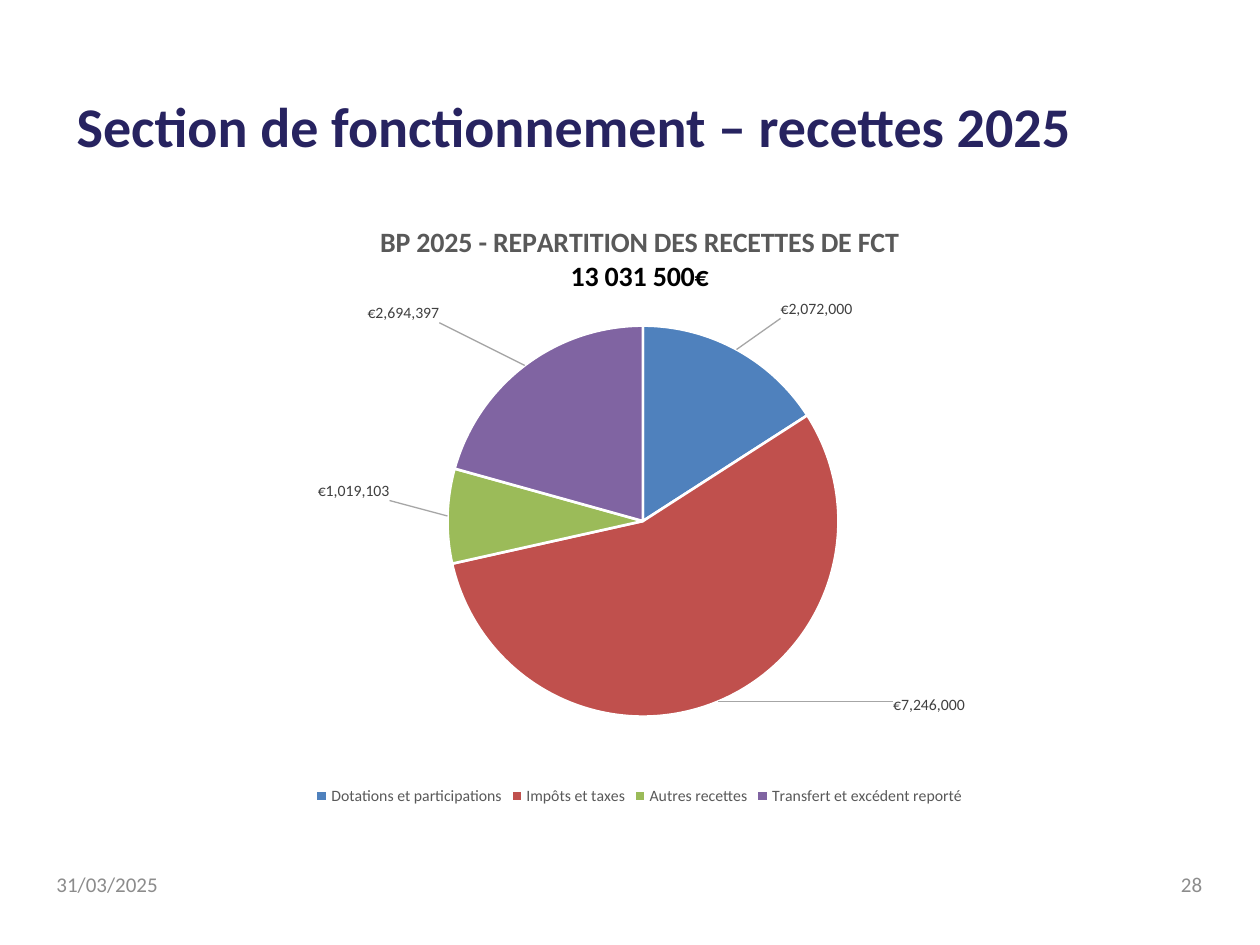
from dataclasses import dataclass

from pptx import Presentation
from pptx.chart.data import CategoryChartData
from pptx.dml.color import RGBColor
from pptx.enum.chart import XL_CHART_TYPE, XL_LABEL_POSITION, XL_LEGEND_POSITION
from pptx.enum.text import MSO_ANCHOR, PP_ALIGN
from pptx.oxml import parse_xml
from pptx.oxml.ns import nsdecls, qn
from pptx.slide import Slide
from pptx.util import Inches, Pt

COLORS = {
    "title": "272360",
    "footer": "8C8C8C",
    "heading": "595959",
    "total": "000000",
    "label": "404040",
    "leader": "A6A6A6",
    "edge": "FFFFFF",
}

# category, value, slice colour, label offset as a share of the chart
RECEIPTS = [
    ("Dotations et participations", 2072000, "4F81BD", (0.04, -0.04)),
    ("Impôts et taxes", 7246000, "C0504D", (0.17, -0.02)),
    ("Autres recettes", 1019103, "9BBB59", (-0.05, -0.04)),
    ("Transfert et excédent reporté", 2694397, "8064A2", (-0.08, -0.06)),
]


def format_font(font, name, size, color, bold=False):
    font.name = name
    font.size = Pt(size)
    font.bold = bold
    font.color.rgb = RGBColor.from_string(color)


def write_text(paragraph, text, *, font, size, color, bold=False, align=PP_ALIGN.LEFT):
    paragraph.alignment = align
    span = paragraph.add_run()
    span.text = text
    format_font(span.font, font, size, color, bold)


def set_layout(parent, index, **values):
    """Give a chart part a manual layout, as its child at the given index."""
    old = parent.find(qn("c:layout"))
    if old is not None:
        parent.remove(old)
    fields = "".join(f'<c:{key} val="{value}"/>' for key, value in values.items())
    parent.insert(index, parse_xml(
        f'<c:layout {nsdecls("c")}><c:manualLayout>{fields}</c:manualLayout></c:layout>'
    ))


@dataclass
class Page:
    slide: Slide
    font: str = "Calibri"

    def text(self, text, left, top, width, height, **style):
        box = self.slide.shapes.add_textbox(
            Inches(left), Inches(top), Inches(width), Inches(height)
        )
        frame = box.text_frame
        frame.word_wrap = True
        frame.vertical_anchor = MSO_ANCHOR.MIDDLE
        write_text(frame.paragraphs[0], text, font=self.font, **style)

    def pie(self, receipts, left, top, width, height):
        data = CategoryChartData(number_format='"€"#,##0')
        data.categories = [name for name, *_ in receipts]
        data.add_series("Series 1", [value for _, value, *_ in receipts])
        chart = self.slide.shapes.add_chart(
            XL_CHART_TYPE.PIE, Inches(left), Inches(top),
            Inches(width), Inches(height), data,
        ).chart
        format_font(chart.font, self.font, 10, COLORS["total"])
        set_layout(
            chart.plots[0]._element.getparent(), 0, layoutTarget="inner",
            xMode="edge", yMode="edge", x=0.085, y=0.212, w=0.837, h=0.636,
        )
        chart.has_legend = True
        chart.legend.position = XL_LEGEND_POSITION.BOTTOM
        chart.legend.include_in_layout = False
        format_font(chart.legend.font, self.font, 9, COLORS["heading"])
        self.slices(chart.plots[0].series[0], receipts)
        return chart

    def slices(self, series, receipts):
        labels = series.data_labels
        labels.show_value = True
        labels.number_format = '"€"#,##0'
        labels.number_format_is_linked = False
        labels.position = XL_LABEL_POSITION.OUTSIDE_END
        format_font(labels.font, self.font, 9, COLORS["label"])
        labels._element.append(parse_xml(
            f'<c:leaderLines {nsdecls("c", "a")}><c:spPr><a:ln w="9525"><a:solidFill>'
            f'<a:srgbClr val="{COLORS["leader"]}"/></a:solidFill></a:ln></c:spPr></c:leaderLines>'
        ))
        for index, (_, _, color, (x, y)) in enumerate(receipts):
            point = series.points[index]
            point.format.fill.solid()
            point.format.fill.fore_color.rgb = RGBColor.from_string(color)
            point.format.line.color.rgb = RGBColor.from_string(COLORS["edge"])
            point.format.line.width = Pt(1.5)
            label = point.data_label
            format_font(label.font, self.font, 9, COLORS["label"])
            label.position = XL_LABEL_POSITION.OUTSIDE_END
            set_layout(labels._element.findall(qn("c:dLbl"))[index], 1, x=x, y=y)

    def chart_title(self, chart, lines):
        title = chart.chart_title
        frame = title.text_frame
        for index, (text, color) in enumerate(lines):
            paragraph = frame.add_paragraph() if index else frame.paragraphs[0]
            write_text(paragraph, text, font=self.font, size=16, color=color,
                       bold=True, align=PP_ALIGN.CENTER)
        set_layout(title._element, 1, xMode="edge", yMode="edge", x=0.24, y=0.04)


def main():
    deck = Presentation()
    deck.slide_width, deck.slide_height = Inches(10), Inches(7.5)
    page = Page(deck.slides.add_slide(deck.slide_layouts[6]))

    page.text("Section de fonctionnement – recettes 2025", 0.51, 0.76, 8.19, 0.47,
              size=32, color=COLORS["title"], bold=True)
    footer = {"size": 12, "color": COLORS["footer"]}
    page.text("31/03/2025", 0.35, 6.82, 2.33, 0.4, **footer)
    page.text("28", 7.31, 6.82, 2.33, 0.4, align=PP_ALIGN.RIGHT, **footer)

    chart = page.pie(RECEIPTS, 1.06, 1.55, 8.03, 4.88)
    page.chart_title(chart, [
        ("BP 2025 - REPARTITION DES RECETTES DE FCT", COLORS["heading"]),
        ("13 031 500€", COLORS["total"]),
    ])
    deck.save("out.pptx")


if __name__ == "__main__":
    main()
